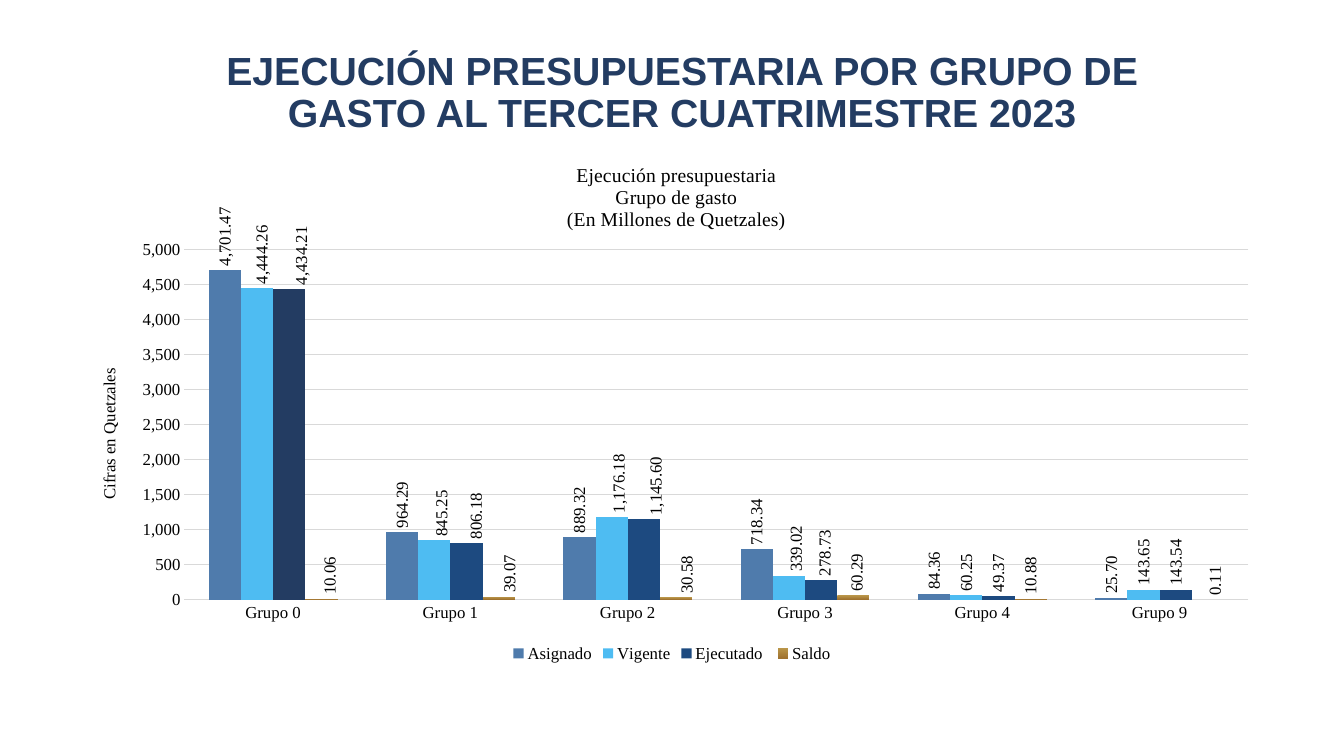
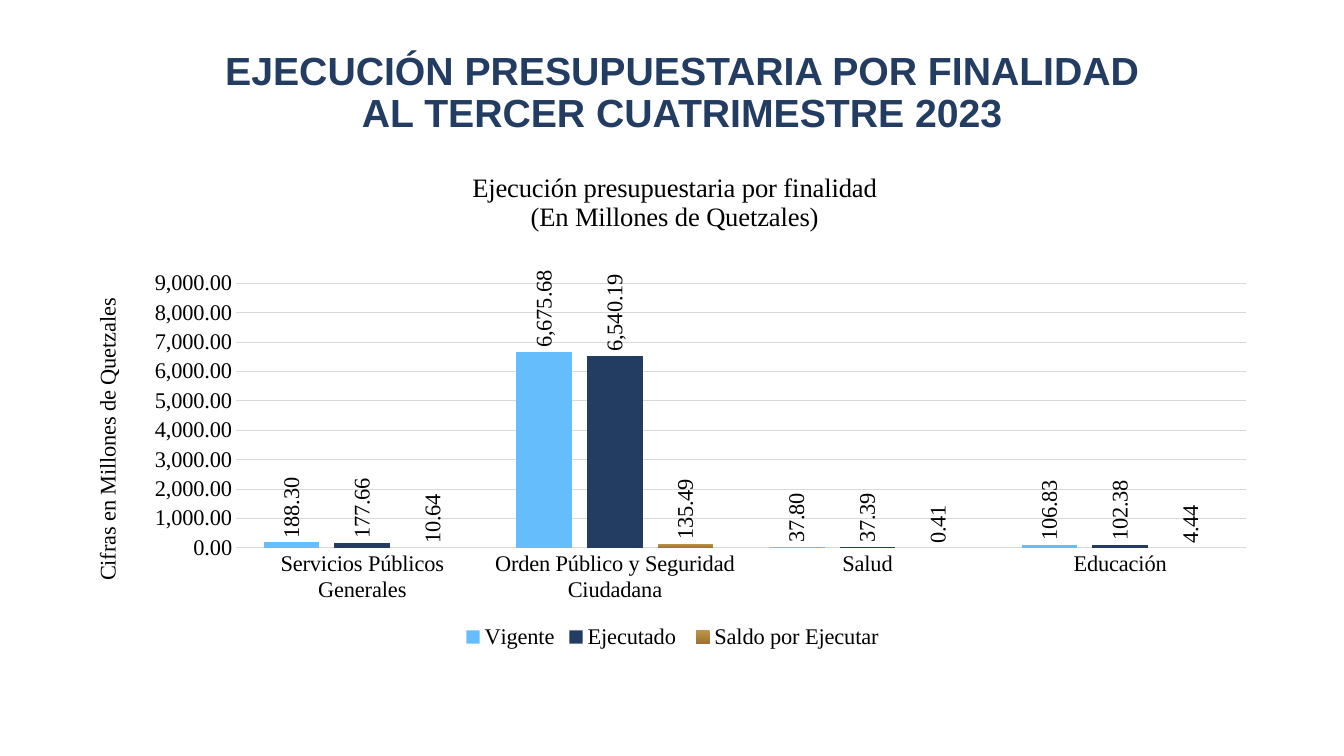
from copy import deepcopy
from dataclasses import dataclass

from lxml import etree
from pptx import Presentation
from pptx.chart.data import CategoryChartData as Data
from pptx.dml.color import RGBColor as RGB
from pptx.enum.chart import XL_CHART_TYPE as Kind
from pptx.enum.chart import XL_LABEL_POSITION as Spot
from pptx.enum.chart import XL_LEGEND_POSITION as Side
from pptx.enum.chart import XL_TICK_MARK as Tick
from pptx.enum.text import MSO_ANCHOR as Anchor
from pptx.enum.text import PP_ALIGN as Align
from pptx.oxml.ns import qn
from pptx.util import Inches, Pt


@dataclass(frozen=True)
class Theme:
    navy: str = "233C62"
    deep: str = "1D4A80"
    steel: str = "4F7BAC"
    cyan: str = "4EBCF2"
    sky: str = "66BDFC"
    gold: tuple = ("BA9649", "9F722F")
    ink: str = "000000"
    grid: str = "D9D9D9"
    sans: str = "Arial"
    serif: str = "Times New Roman"
    head: int = 28
    small: int = 12
    large: int = 16


THEME = Theme()


def layout(**parts):
    """Make a manual chart layout from fractions of the chart."""
    root = etree.Element(qn("c:layout"))
    manual = etree.SubElement(root, qn("c:manualLayout"))
    for tag, val in parts.items():
        etree.SubElement(manual, qn("c:" + tag), val=str(val))
    return root


def swap(parent, new, after=None):
    """Put a layout into a chart part, first or behind a given child."""
    for old in parent.findall(qn("c:layout")):
        parent.remove(old)
    if after is None:
        parent.insert(0, new)
    else:
        parent.find(qn(after)).addnext(new)


class Deck:
    def __init__(self, theme):
        self.theme = theme
        self.prs = Presentation()
        self.prs.slide_width = Inches(13.33)
        self.prs.slide_height = Inches(7.5)
        self.slide = None

    def font(self, font, size, color=None, name=None, bold=False):
        font.size = Pt(size)
        font.name = name or self.theme.serif
        font.bold = bold
        font.color.rgb = RGB.from_string(color or self.theme.ink)

    def paint(self, fill, color):
        if isinstance(color, str):
            fill.solid()
            fill.fore_color.rgb = RGB.from_string(color)
            return
        fill.gradient()
        fill.gradient_angle = 270
        for stop, tone in zip(fill.gradient_stops, color):
            stop.color.rgb = RGB.from_string(tone)

    def page(self, title):
        self.slide = self.prs.slides.add_slide(self.prs.slide_layouts[6])
        box = self.slide.shapes.add_textbox(
            Inches(1.96), Inches(0.63), Inches(9.61), Inches(0.6))
        frame = box.text_frame
        frame.word_wrap = True
        frame.vertical_anchor = Anchor.MIDDLE
        frame.text = title
        para = frame.paragraphs[0]
        para.alignment = Align.CENTER
        para.line_spacing = 0.9
        self.font(para.font, self.theme.head, self.theme.navy,
                  self.theme.sans, True)

    def chart(self, at, cats, rows, size, gap, lap, plot):
        data = Data()
        data.categories = cats
        for name, vals, _ in rows:
            data.add_series(name, vals)
        chart = self.slide.shapes.add_chart(
            Kind.COLUMN_CLUSTERED, *map(Inches, at), data).chart
        self.font(chart.font, size)
        bars = chart.plots[0]
        bars.gap_width, bars.overlap = gap, lap
        bars.vary_by_categories = False
        for series, row in zip(bars.series, rows):
            self.paint(series.format.fill, row[2])
            series.invert_if_negative = False
            self.labels(series.data_labels, size)
        # Legend and plot area
        chart.has_legend = True
        chart.legend.position = Side.BOTTOM
        chart.legend.include_in_layout = False
        self.font(chart.legend.font, size)
        area = chart._chartSpace.find(".//" + qn("c:plotArea"))
        x, y, w, h = plot
        swap(area, layout(layoutTarget="inner", xMode="edge", yMode="edge",
                          x=x, y=y, w=w, h=h))
        return chart

    def labels(self, labels, size):
        labels.show_value = True
        labels.number_format = "#,##0.00"
        labels.number_format_is_linked = False
        labels.position = Spot.OUTSIDE_END
        self.font(labels.font, size)
        body = labels._element.find(".//" + qn("a:bodyPr"))
        body.set("rot", "-5400000")
        body.set("vert", "horz")

    def nudge(self, series, shifts):
        """Move single labels sideways, by a fraction of the chart width."""
        base = series.data_labels._element
        for idx, shift in shifts.items():
            series.points[idx].data_label.position = Spot.OUTSIDE_END
            for item in base.findall(qn("c:dLbl")):
                mark = item.find(qn("c:idx"))
                if mark.get("val") == str(idx):
                    for old in item.findall(qn("c:txPr")):
                        item.remove(old)
                    for tag in ("c:txPr", "c:numFmt"):
                        mark.addnext(deepcopy(base.find(qn(tag))))
                    mark.addnext(layout(x=shift, y=0))

    def title(self, owner, text, size, x, y):
        frame = owner.text_frame
        frame.text = text
        for para in frame.paragraphs:
            self.font(para.font, size)
        swap(owner._element, layout(xMode="edge", yMode="edge", x=x, y=y),
             "c:tx")
        return frame

    def axes(self, chart, size, top, step, form, line):
        cat, val = chart.category_axis, chart.value_axis
        for axis in (cat, val):
            axis.major_tick_mark = axis.minor_tick_mark = Tick.NONE
            axis.format.line.fill.background()
            self.font(axis.tick_labels.font, size)
        if line:
            self.rule(cat.format.line)
        val.minimum_scale, val.maximum_scale = 0, top
        val.major_unit = step
        val.tick_labels.number_format = form
        val.tick_labels.number_format_is_linked = False
        val.has_major_gridlines = True
        self.rule(val.major_gridlines.format.line)

    def rule(self, line):
        line.color.rgb = RGB.from_string(self.theme.grid)
        line.width = Pt(0.75)

    def side(self, chart, text, size, x, y):
        frame = self.title(chart.value_axis.axis_title, text, size, x, y)
        body = frame._txBody.find(qn("a:bodyPr"))
        body.set("rot", "-5400000")
        body.set("vert", "horz")


def groups(deck):
    th = deck.theme
    deck.page("EJECUCIÓN PRESUPUESTARIA POR GRUPO DE GASTO "
              "AL TERCER CUATRIMESTRE 2023")
    rows = [
        ("Asignado", (4701.47, 964.29, 889.32, 718.34, 84.36, 25.7), th.steel),
        ("Vigente", (4444.26, 845.25, 1176.18, 339.02, 60.25, 143.65), th.cyan),
        ("Ejecutado ", (4434.21, 806.18, 1145.6, 278.73, 49.37, 143.54),
         th.deep),
        ("Saldo", (10.06, 39.07, 30.58, 60.29, 10.88, 0.11), th.gold),
    ]
    cats = [f"Grupo {n}" for n in (0, 1, 2, 3, 4, 9)]
    chart = deck.chart((0.71, 1.37, 11.91, 5.24), cats, rows, th.small,
                       150, 0, (0.094, 0.211, 0.886, 0.663))
    deck.axes(chart, th.small, 5000, 500, "#,##0", False)
    deck.title(chart.chart_title, "Ejecución presupuestaria\nGrupo de gasto\n"
               "(En Millones de Quetzales)", 14, 0.41, 0.04)
    deck.side(chart, "Cifras en Quetzales", th.small, 0.02, 0.43)
    # Darker first bar and labels set apart
    series = chart.plots[0].series
    deck.paint(series[2].points[0].format.fill, th.navy)
    deck.nudge(series[1], {0: 0.004, 1: 0.006, 2: 0.006, 3: 0.006})
    deck.nudge(series[2], {0: 0.01, 1: 0.008, 2: 0.01, 3: 0.003})
    deck.nudge(series[3], {0: 0.007, 1: 0.009, 2: 0.009, 3: 0.003, 5: 0.006})


def goals(deck):
    th = deck.theme
    deck.page("EJECUCIÓN PRESUPUESTARIA POR FINALIDAD "
              "AL TERCER CUATRIMESTRE 2023")
    rows = [
        ("Vigente", (188.3, 6675.68, 37.8, 106.83), th.sky),
        ("Ejecutado ", (177.66, 6540.19, 37.39, 102.38), th.navy),
        ("Saldo por Ejecutar", (10.64, 135.49, 0.41, 4.44), th.gold),
    ]
    cats = ["Servicios Públicos Generales",
            "Orden Público y Seguridad Ciudadana", "Salud", "Educación"]
    chart = deck.chart((0.74, 1.43, 11.86, 5.06), cats, rows, th.large,
                       100, -27, (0.135, 0.273, 0.845, 0.519))
    deck.axes(chart, th.large, 9000, 1000, "#,##0.00", True)
    deck.title(chart.chart_title, "Ejecución presupuestaria por finalidad\n"
               "(En Millones de Quetzales)", 19, 0.33, 0.05)
    deck.side(chart, "Cifras en Millones de Quetzales", th.large, 0.012, 0.294)


def main():
    deck = Deck(THEME)
    groups(deck)
    goals(deck)
    deck.prs.save("out.pptx")


if __name__ == "__main__":
    main()
